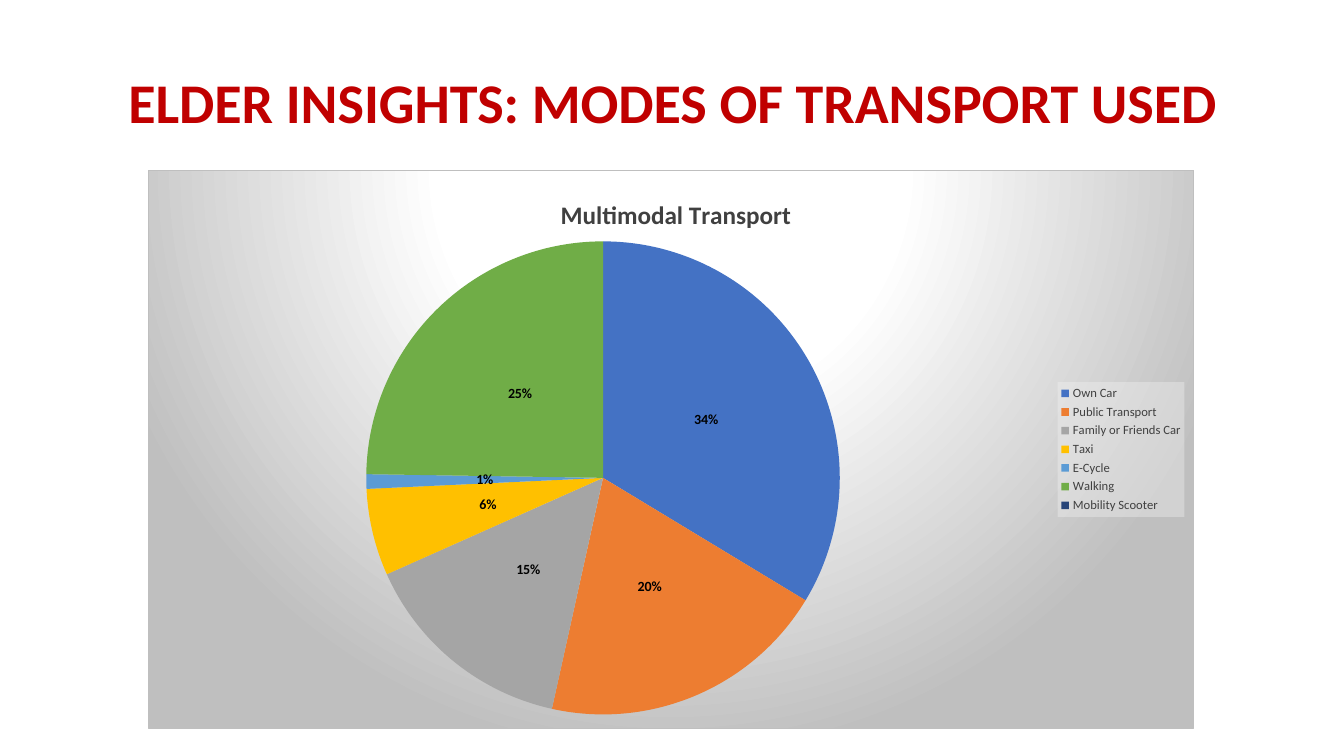
from pptx import Presentation
from pptx.chart.data import CategoryChartData
from pptx.dml.color import RGBColor
from pptx.enum.chart import XL_CHART_TYPE as ChartType
from pptx.enum.chart import XL_LABEL_POSITION as LabelPosition
from pptx.enum.chart import XL_LEGEND_POSITION as LegendPosition
from pptx.enum.text import MSO_ANCHOR as Anchor
from pptx.enum.text import PP_ALIGN as Align
from pptx.oxml import parse_xml
from pptx.oxml.ns import nsdecls, qn
from pptx.util import Pt

SLIDE_SIZE = (1344, 756)
EMU_PER_PX = 12192000 / 1344
FONT = "Calibri"
TITLE_BOX = (93, 40, 1159, 130)
CHART_BOX = (148, 170, 1046, 559)

# Boxes inside the chart, in px from its top left corner
PIE_BOX = (218, 71, 474, 474)
HEADING_CORNER = (408, 22)
LEGEND_BOX = (910, 212, 127, 135)

MODES = [
    ("Own Car", 34, "4472C4"),
    ("Public Transport", 20, "ED7D31"),
    ("Family or Friends Car", 15, "A5A5A5"),
    ("Taxi", 6, "FFC000"),
    ("E-Cycle", 1, "5B9BD5"),
    ("Walking", 25, "70AD47"),
    ("Mobility Scooter", 0, "264478"),
]

CHART_FILL = f"""<c:spPr {nsdecls("c", "a")}>
  <a:gradFill><a:gsLst>
    <a:gs pos="0"><a:srgbClr val="FFFFFF"/></a:gs>
    <a:gs pos="39000"><a:srgbClr val="FFFFFF"/></a:gs>
    <a:gs pos="100000"><a:srgbClr val="BFBFBF"/></a:gs>
  </a:gsLst><a:path path="circle">
    <a:fillToRect l="50000" t="-80000" r="50000" b="180000"/>
  </a:path></a:gradFill>
  <a:ln w="9525"><a:solidFill><a:srgbClr val="BFBFBF"/></a:solidFill></a:ln>
</c:spPr>"""

LEGEND_FILL = f"""<c:spPr {nsdecls("c", "a")}>
  <a:solidFill><a:srgbClr val="F2F2F2"><a:alpha val="39000"/></a:srgbClr></a:solidFill>
  <a:ln><a:noFill/></a:ln>
</c:spPr>"""


def px(length):
    return round(length * EMU_PER_PX)


def color(hex_string):
    return RGBColor.from_string(hex_string)


def style_font(font, size, hex_color, bold=False):
    font.name = FONT
    font.size = Pt(size)
    font.bold = bold
    font.color.rgb = color(hex_color)


def set_layout(element, index, box, inner=False):
    """Give a chart part a fixed place, with box in px inside the chart."""
    for layout in element.findall(qn("c:layout")):
        element.remove(layout)
    width, height = CHART_BOX[2:]
    target = '<c:layoutTarget val="inner"/>' if inner else ""
    modes = '<c:xMode val="edge"/><c:yMode val="edge"/>'
    values = "".join(
        f'<c:{name} val="{length / whole:.4f}"/>'
        for name, length, whole in zip("xywh", box, (width, height) * 2)
    )
    element.insert(index, parse_xml(
        f'<c:layout {nsdecls("c")}><c:manualLayout>{target}{modes}{values}'
        "</c:manualLayout></c:layout>"
    ))


def add_title(slide, box):
    text_frame = slide.shapes.add_textbox(*map(px, box)).text_frame
    text_frame.word_wrap = True
    text_frame.vertical_anchor = Anchor.MIDDLE
    text_frame.text = "ELDER INSIGHTS: MODES OF TRANSPORT USED"
    paragraph = text_frame.paragraphs[0]
    paragraph.alignment = Align.CENTER
    paragraph.line_spacing = 0.9
    style_font(paragraph.runs[0].font, 40, "C00000", bold=True)


def style_slices(series):
    for index, (_, _, hex_color) in enumerate(MODES):
        fill = series.points[index].format.fill
        fill.solid()
        fill.fore_color.rgb = color(hex_color)

    labels = series.data_labels
    labels.show_percentage = True
    labels.show_value = False
    labels.number_format = "0%"
    labels.number_format_is_linked = False
    labels.position = LabelPosition.CENTER
    style_font(labels.font, 10, "000000", bold=True)
    label_list = series.format and series.points and labels._element
    empty = [index for index, (_, share, _) in enumerate(MODES) if share == 0]
    for place, index in enumerate(empty):
        label_list.insert(place, parse_xml(
            f'<c:dLbl {nsdecls("c")}><c:idx val="{index}"/><c:delete val="1"/></c:dLbl>'
        ))


def add_transport_pie(slide, box):
    data = CategoryChartData()
    data.categories = [name for name, _, _ in MODES]
    data.add_series("Series 1", [share for _, share, _ in MODES])
    chart = slide.shapes.add_chart(ChartType.PIE, *map(px, box), data).chart
    style_font(chart.font, 10, "000000")
    chart.plots[0].vary_by_categories = True
    style_slices(chart.plots[0].series[0])

    chart.has_title = True
    heading = chart.chart_title.text_frame
    heading.text = "Multimodal Transport"
    style_font(heading.paragraphs[0].runs[0].font, 18, "404040", bold=True)

    chart.has_legend = True
    chart.legend.position = LegendPosition.RIGHT
    chart.legend.include_in_layout = False
    style_font(chart.legend.font, 9, "404040")

    chart_part = chart.element.find(qn("c:chart"))
    legend = chart_part.find(qn("c:legend"))
    set_layout(chart_part.find(qn("c:plotArea")), 0, PIE_BOX, inner=True)
    set_layout(chart_part.find(qn("c:title")), 1, HEADING_CORNER)
    set_layout(legend, 1, LEGEND_BOX)
    legend.find(qn("c:txPr")).addprevious(parse_xml(LEGEND_FILL))
    chart_part.addnext(parse_xml(CHART_FILL))


def main():
    presentation = Presentation()
    presentation.slide_width, presentation.slide_height = map(px, SLIDE_SIZE)
    slide = presentation.slides.add_slide(presentation.slide_layouts[6])
    add_title(slide, TITLE_BOX)
    add_transport_pie(slide, CHART_BOX)
    presentation.save("out.pptx")


if __name__ == "__main__":
    main()
